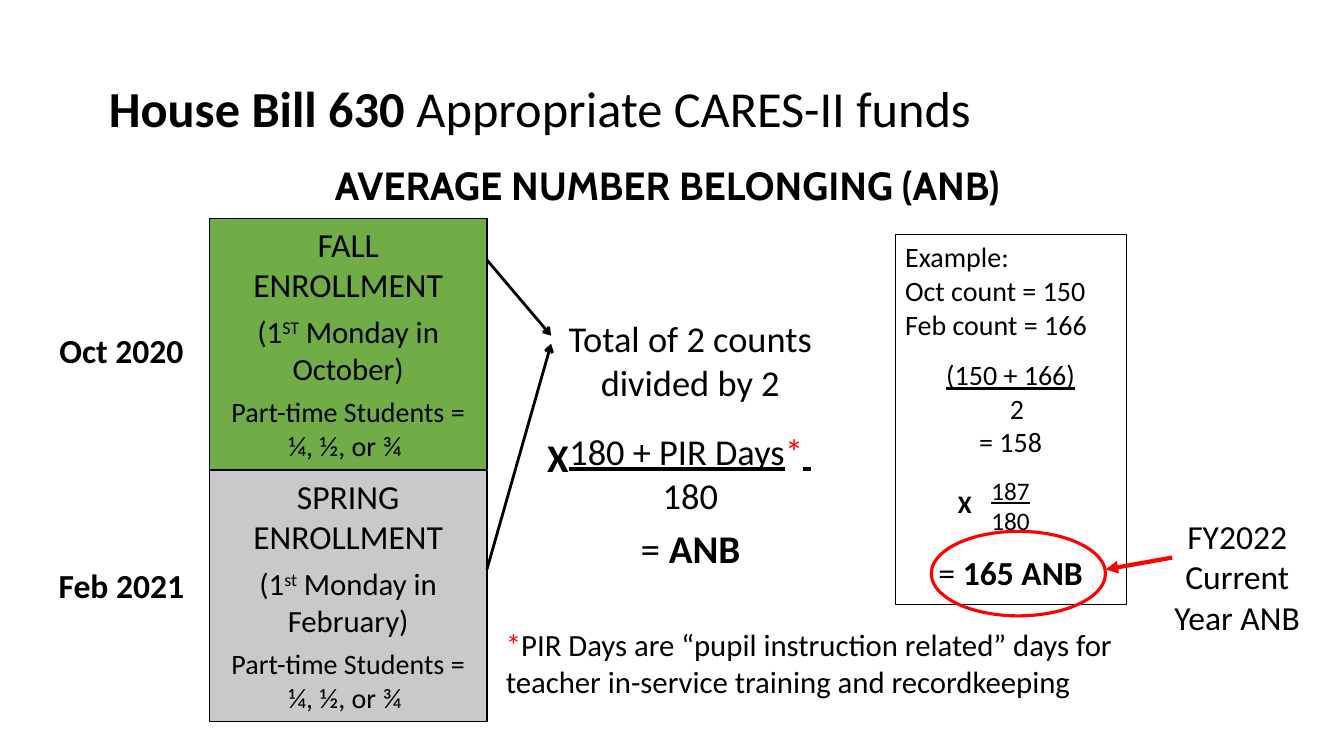
from lxml import etree
from pptx import Presentation
from pptx.dml.color import RGBColor
from pptx.enum.shapes import MSO_CONNECTOR, MSO_SHAPE
from pptx.enum.text import MSO_ANCHOR, MSO_AUTO_SIZE, PP_ALIGN
from pptx.oxml.ns import qn
from pptx.util import Cm, Pt

LEFT, MID = PP_ALIGN.LEFT, PP_ALIGN.CENTER
TOP, CENTRE = MSO_ANCHOR.TOP, MSO_ANCHOR.MIDDLE
RECT, OVAL = MSO_SHAPE.RECTANGLE, MSO_SHAPE.OVAL
STRAIGHT = MSO_CONNECTOR.STRAIGHT
NO_FIT = MSO_AUTO_SIZE.NONE
BLACK, RED, GREEN, GREY = "000000", "FF0000", "70AD47", "C9C9C9"


def paint(text):
    return RGBColor.from_string(text)


def bit(text, **look):
    return text, look


def para(*bits, size=24, align=MID, before=0, after=0, indent=0):
    return bits, size, align, before, after, indent


class Page:
    """Holds the font style and the current slide."""

    def __init__(self, deck, font="Calibri", ink=BLACK):
        self.font, self.ink = font, ink
        self.slide = deck.slides.add_slide(deck.slide_layouts[5])

    def put(self, frame, paras, anchor=TOP):
        frame.word_wrap = True
        frame.auto_size = NO_FIT
        frame.vertical_anchor = anchor
        for i, (bits, size, align, before, after, indent) in enumerate(paras):
            line = frame.add_paragraph() if i else frame.paragraphs[0]
            line.text = bits[0][0]
            for text, _ in bits[1:]:
                line.add_run().text = text
            line.alignment = align
            line.space_before, line.space_after = Pt(before), Pt(after)
            if indent:
                props = line._p.get_or_add_pPr()
                props.set("marL", str(Cm(indent)))
                props.set("indent", "0")
            for piece, (_, look) in zip(line.runs, bits):
                self.style(piece, size, **look)

    def style(self, piece, size, bold=False, under=False, color=None,
              font=None, raised=False):
        face = piece.font
        face.name, face.size = font or self.font, Pt(size)
        face.bold, face.underline = bold, under
        face.color.rgb = paint(color or self.ink)
        if raised:
            piece._r.get_or_add_rPr().set("baseline", "30000")

    def title(self, box, *bits):
        head = self.slide.shapes.title
        head.left, head.top, head.width, head.height = map(Cm, box)
        self.put(head.text_frame, [para(*bits, size=36, align=LEFT)], CENTRE)
        head.text_frame.paragraphs[0].line_spacing = 0.9

    def label(self, box, *paras):
        shape = self.slide.shapes.add_textbox(*map(Cm, box))
        self.put(shape.text_frame, paras)

    def shape(self, kind, box, *paras, fill=None, line=BLACK, width=1):
        shape = self.slide.shapes.add_shape(kind, *map(Cm, box))
        shape.shadow.inherit = False
        if fill:
            shape.fill.solid()
            shape.fill.fore_color.rgb = paint(fill)
        else:
            shape.fill.background()
        shape.line.color.rgb = paint(line)
        shape.line.width = Pt(width)
        self.put(shape.text_frame, paras)

    def arrow(self, start, end, head="arrow", color=BLACK, width=2):
        link = self.slide.shapes.add_connector(
            STRAIGHT, *map(Cm, start + end))
        link.line.color.rgb = paint(color)
        link.line.width = Pt(width)
        props = link._element.spPr
        tip = etree.SubElement(props.find(qn("a:ln")), qn("a:tailEnd"))
        tip.set("type", head)
        etree.SubElement(props, qn("a:effectLst"))


def main():
    deck = Presentation()
    deck.slide_width, deck.slide_height = Cm(33.87), Cm(19.05)
    page = Page(deck)
    page.title((2.49, 1.68, 25.86, 2.24), bit("House Bill 630 ", bold=True),
               bit("Appropriate CARES-II funds"))

    terms = [("FALL", "ST", "October", GREEN), ("SPRING", "st", "February", GREY)]
    for i, (term, suffix, month, fill) in enumerate(terms):
        page.shape(
            RECT, (5.28, 5.51 + 6.35 * i, 6.99, 6.33),
            para(bit(f"{term} ENROLLMENT"), after=6),
            para(bit("(1"), bit(suffix, raised=True),
                 bit(f" Monday in {month})"), size=22, after=6),
            para(bit("Part-time Students = ¼, ½, or ¾ "), size=20, after=6),
            fill=fill)

    page.label(
        (12.27, 7.85, 10.26, 7.39),
        para(bit("Total of 2 counts"), size=26),
        para(bit("divided by 2"), size=26, after=18),
        para(bit("180 + PIR Days", under=True), bit("*", color=RED),
             bit(" ", under=True), size=26),
        para(bit("180"), size=26, after=6),
        para(bit("= "), bit("ANB", bold=True), size=28))
    page.label(
        (12.5, 15.65, 15.88, 2.13),
        para(bit("*", color=RED),
             bit("PIR Days are “pupil instruction related” days for "
                 "teacher in-service training and recordkeeping"),
             size=22, align=LEFT))
    page.label((5.28, 3.94, 23.06, 1.45),
               para(bit("AVERAGE NUMBER BELONGING (ANB)", bold=True,
                        font="Cabin"), size=28))

    page.arrow((12.27, 6.55), (13.89, 8.46))
    page.arrow((12.27, 14.35), (13.89, 8.66))

    page.shape(
        RECT, (22.56, 5.92, 5.82, 9.32),
        para(bit("Example:"), size=20, align=LEFT),
        para(bit("Oct count = 150"), size=20, align=LEFT),
        para(bit("Feb count = 166"), size=20, align=LEFT),
        para(bit("(150 + 166)", under=True), size=20, before=12),
        para(bit("2"), size=20, indent=0.32),
        para(bit("= 158"), size=20),
        para(bit("187", under=True), size=18, before=12),
        para(bit("180"), size=18),
        para(bit("= "), bit("165 ANB", bold=True), before=12),
        width=0.75)

    marks = [("X", 28, (13.54, 10.8, 0.84, 1.45)),
             ("X", 18, (23.83, 12.17, 0.97, 1.02)),
             ("Oct 2020", 24, (1.04, 8.2, 4.04, 1.27)),
             ("Feb 2021", 24, (1.04, 14.12, 4.04, 1.27))]
    for text, size, box in marks:
        page.label(box, para(bit(text, bold=True), size=size))

    page.label((29.29, 12.88, 3.78, 3.33), para(bit("FY2022 Current Year ANB")))
    page.arrow((29.54, 14.05), (27.86, 14.35), "triangle", RED, 3)
    page.shape(OVAL, (23.47, 13.39, 4.39, 2.13), line=RED, width=2.25)
    deck.save("out.pptx")


if __name__ == "__main__":
    main()
